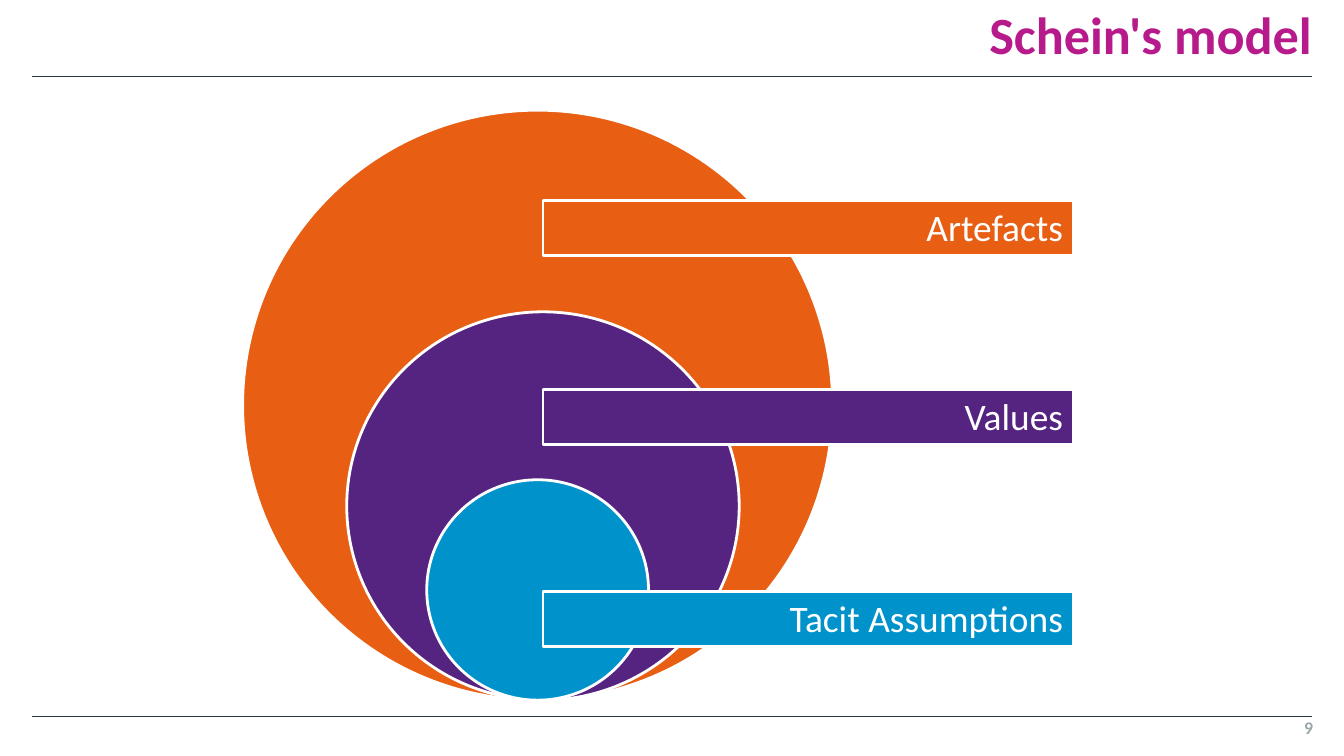
from lxml import etree
from pptx import Presentation
from pptx.dml.color import RGBColor
from pptx.enum.shapes import MSO_CONNECTOR, MSO_SHAPE
from pptx.enum.text import MSO_ANCHOR, PP_ALIGN
from pptx.oxml.ns import qn
from pptx.util import Inches, Pt

OVAL, RECT = MSO_SHAPE.OVAL, MSO_SHAPE.RECTANGLE
LINE = MSO_CONNECTOR.STRAIGHT
TOP, MID, BASE = MSO_ANCHOR.TOP, MSO_ANCHOR.MIDDLE, MSO_ANCHOR.BOTTOM
RIGHT = PP_ALIGN.RIGHT

HUES = {"orange": "E85E12", "purple": "552481", "blue": "0092CB",
        "pink": "B71A8B", "rule": "2C3841", "grey": "9BA7A8", "white": "FFFFFF"}
TITLE, PAGE = "Schein's model", "9"
LAYERS = [
    {"name": "Artefacts", "hue": "orange", "mid": 4.0, "size": (4.39, 4.39), "top": 1.49},
    {"name": "Values", "hue": "purple", "mid": 4.04, "size": (2.92, 2.89), "top": 2.9},
    {"name": "Tacit Assumptions", "hue": "blue", "mid": 4.0, "size": (1.65, 1.64), "top": 4.4},
]
WIDE, EDGE = 10, 0.24
HIGH = WIDE * 9 / 16
RULES = (0.57, 5.33)
FLOOR = 5.21
BAR_X, BAR_W, BAR_H = 4.04, 3.95, 0.41


def tint(hue):
    return RGBColor.from_string(HUES[hue])


def write(box, text, size, hue, bold=False, anchor=TOP, pad=(0, 0), lead=1.0):
    frame = box.text_frame
    frame.text = text
    frame.word_wrap = True
    frame.vertical_anchor = anchor
    frame.margin_left = frame.margin_right = Inches(pad[0])
    frame.margin_top = frame.margin_bottom = Inches(pad[1])
    para = frame.paragraphs[0]
    para.alignment = RIGHT
    para.line_spacing = lead
    font = para.runs[0].font
    font.name, font.size, font.bold = "Calibri", Pt(size), bold
    font.color.rgb = tint(hue)


def draw(kind, hue, *area):
    shape = slide.shapes.add_shape(kind, *map(Inches, area))
    shape.shadow.inherit = False
    shape.fill.solid()
    shape.fill.fore_color.rgb = tint(hue)
    shape.line.color.rgb = tint("white")
    shape.line.width = Pt(1.5)
    return shape


deck = Presentation()
deck.slide_width, deck.slide_height = Inches(WIDE), Inches(HIGH)
slide = deck.slides.add_slide(deck.slide_layouts[5])

for y in RULES:
    rule = slide.shapes.add_connector(
        LINE, Inches(EDGE), Inches(y), Inches(WIDE - EDGE), Inches(y))
    rule.line.color.rgb = tint("rule")
    rule.line.width = Pt(0.5)
    etree.SubElement(rule.element.spPr, qn("a:effectLst"))

title = slide.shapes.title
title.left, title.top, title.width, title.height = map(Inches, (3.03, 0, 6.73, 0.49))
write(title, TITLE, 28, "pink", True, BASE, lead=0.9)
page = slide.shapes.add_textbox(*map(Inches, (8.98, RULES[1], 0.79, 0.18)))
write(page, PAGE, 9.5, "grey", True)

for layer in LAYERS:
    w, h = layer["size"]
    draw(OVAL, layer["hue"], layer["mid"] - w / 2, FLOOR - h, w, h)

for layer in LAYERS:
    bar = draw(RECT, layer["hue"], BAR_X, layer["top"], BAR_W, BAR_H)
    write(bar, layer["name"], 20, "white", anchor=MID, pad=(0.08, 0.04), lead=0.99)

deck.save("out.pptx")
